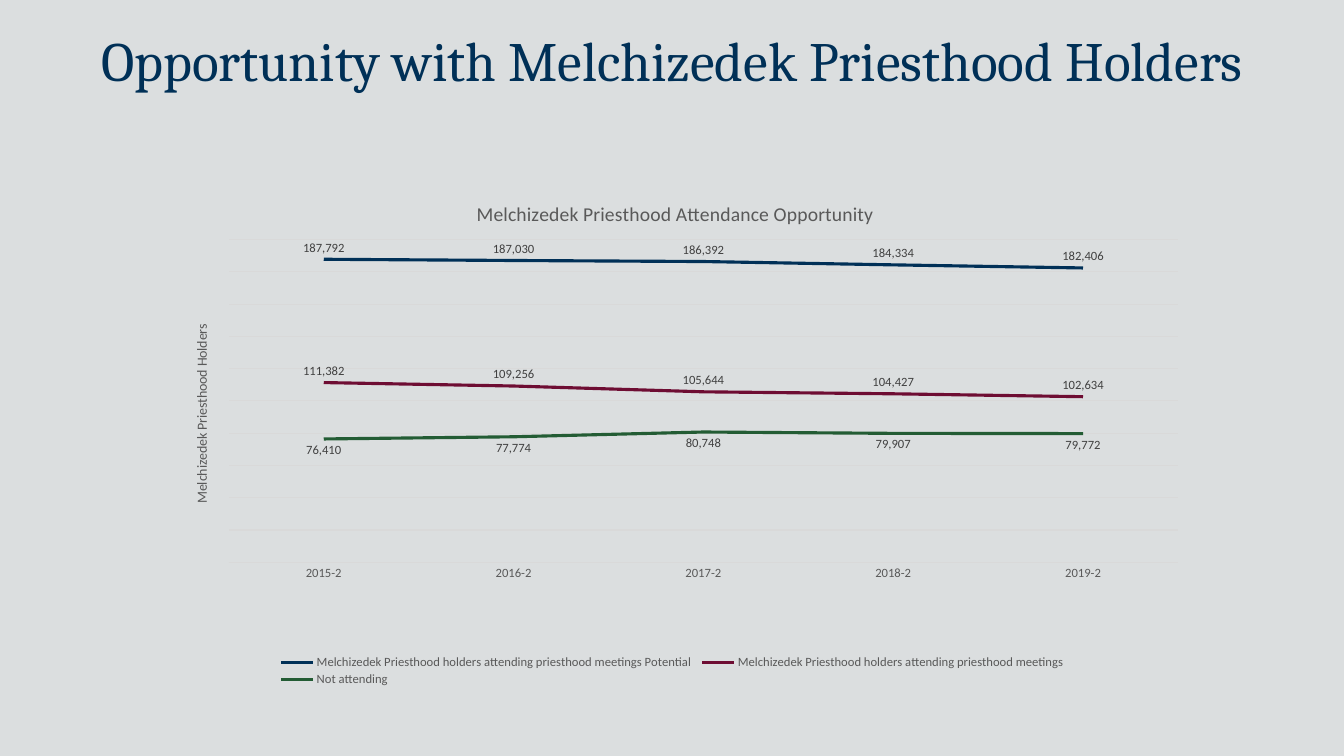
import pptx
import pptx.chart.data
import pptx.dml.color
import pptx.enum.chart
import pptx.enum.text
import pptx.oxml
import pptx.oxml.ns
import pptx.util

Inches = pptx.util.Inches
RGBColor = pptx.dml.color.RGBColor

NAVY = RGBColor(0x00, 0x30, 0x57)
MAROON = RGBColor(0x6E, 0x0D, 0x33)
GREEN = RGBColor(0x23, 0x5C, 0x34)
BACKGROUND = RGBColor(0xDB, 0xDE, 0xDF)
GRID = RGBColor(0xD9, 0xD9, 0xD9)
GRAY = RGBColor(0x59, 0x59, 0x59)
DARK_GRAY = RGBColor(0x40, 0x40, 0x40)

NUMBER_FORMAT = r'_(* #,##0_);_(* \(#,##0\);_(* "-"??_);_('
YEARS = ["2015-2", "2016-2", "2017-2", "2018-2", "2019-2"]
ABOVE = pptx.enum.chart.XL_LABEL_POSITION.ABOVE
BELOW = pptx.enum.chart.XL_LABEL_POSITION.BELOW
SERIES = [
    ("Melchizedek Priesthood holders attending priesthood meetings Potential",
     [187792, 187030, 186392, 184334, 182406], NAVY, ABOVE),
    ("Melchizedek Priesthood holders attending priesthood meetings",
     [111382, 109256, 105644, 104427, 102634], MAROON, ABOVE),
    ("Not attending",
     [76410, 77774, 80748, 79907, 79772], GREEN, BELOW),
]


def format_font(font, size, color, name="Calibri"):
    """Set the size, colour and typeface of a font."""
    font.size = pptx.util.Pt(size)
    font.color.rgb = color
    font.name = name
    font.bold = False


def write_text(tf, text, size=10, color=GRAY, font="Calibri"):
    """Write one centred, formatted paragraph into a text frame."""
    p = tf.paragraphs[0]
    p.alignment = pptx.enum.text.PP_ALIGN.CENTER
    r = p.add_run()
    r.text = text
    format_font(r.font, size, color, font)


def format_line(line, color, width):
    """Set the colour and width of a line."""
    line.color.rgb = color
    line.width = pptx.util.Pt(width)


def set_layout(element, index, inner=False, **fractions):
    """Place a chart part by fractions of the chart area."""
    for old in element.findall(pptx.oxml.ns.qn("c:layout")):
        element.remove(old)
    target = '<c:layoutTarget val="inner"/>' if inner else ""
    modes = "".join(f'<c:{k}Mode val="edge"/>' for k in fractions if k in "xy")
    values = "".join(f'<c:{k} val="{v}"/>' for k, v in fractions.items())
    element.insert(index, pptx.oxml.parse_xml(
        f'<c:layout {pptx.oxml.ns.nsdecls("c")}><c:manualLayout>'
        f"{target}{modes}{values}</c:manualLayout></c:layout>"))


def add_title(s, left, top, width, height):
    """Place and fill the slide title."""
    sp = s.shapes.title
    sp.left, sp.top, sp.width, sp.height = left, top, width, height
    tf = sp.text_frame
    tf.word_wrap = True
    tf.vertical_anchor = pptx.enum.text.MSO_ANCHOR.MIDDLE
    write_text(tf, "Opportunity with Melchizedek Priesthood Holders",
               size=39.6, color=NAVY, font="Cambria")


def format_axes(chart):
    """Format the category axis, the gridlines and the value axis title."""
    axis = chart.category_axis
    axis.major_tick_mark = pptx.enum.chart.XL_TICK_MARK.NONE
    format_font(axis.tick_labels.font, 9, GRAY)
    format_line(axis.format.line, GRID, 0.75)

    axis = chart.value_axis
    axis.minimum_scale, axis.maximum_scale = 0, 200000
    axis.major_unit = 20000
    axis.has_major_gridlines = True
    format_line(axis.major_gridlines.format.line, GRID, 0.75)
    axis.tick_labels.number_format = NUMBER_FORMAT
    axis.tick_labels.number_format_is_linked = False
    axis.visible = False
    tf = axis.axis_title.text_frame
    write_text(tf, "Melchizedek Priesthood Holders")
    tf._txBody.find(pptx.oxml.ns.qn("a:bodyPr")).set("rot", "-5400000")
    set_layout(axis.axis_title.element, 1, x=0.04, y=0.28)


def format_series(series, color, position):
    """Format one line and its value labels."""
    series.smooth = False
    format_line(series.format.line, color, 2.25)
    labels = series.data_labels
    labels.show_value = True
    labels.position = position
    labels.number_format = NUMBER_FORMAT
    labels.number_format_is_linked = False
    format_font(labels.font, 9, DARK_GRAY)


def add_attendance_chart(s, left, top, width, height):
    """Add the attendance line chart."""
    data = pptx.chart.data.CategoryChartData(number_format=NUMBER_FORMAT)
    data.categories = YEARS
    for name, values, _, _ in SERIES:
        data.add_series(name, values)
    chart = s.shapes.add_chart(pptx.enum.chart.XL_CHART_TYPE.LINE,
                               left, top, width, height, data).chart
    format_font(chart.font, 10, GRAY)
    chart.plots[0].vary_by_categories = False
    write_text(chart.chart_title.text_frame,
               "Melchizedek Priesthood Attendance Opportunity", size=14)
    set_layout(chart.chart_title.element, 1, x=0.31, y=0.04)

    format_axes(chart)
    for series, (_, _, color, position) in zip(chart.plots[0].series, SERIES):
        format_series(series, color, position)

    chart.has_legend = True
    chart.legend.position = pptx.enum.chart.XL_LEGEND_POSITION.BOTTOM
    chart.legend.include_in_layout = False
    format_font(chart.legend.font, 9, GRAY)
    set_layout(chart.legend._element, 1, x=0.12, y=0.92, w=0.76, h=0.07)
    plot_area = chart._chartSpace.chart.plotArea
    set_layout(plot_area, 0, inner=True, x=0.077, y=0.122, w=0.906, h=0.623)


def main():
    """Build and save the presentation."""
    prs = pptx.Presentation()
    prs.slide_width, prs.slide_height = Inches(13.33), Inches(7.5)
    s = prs.slides.add_slide(prs.slide_layouts.get_by_name("Title Only"))
    s.background.fill.solid()
    s.background.fill.fore_color.rgb = BACKGROUND
    add_title(s, Inches(0.24), Inches(0.17), Inches(12.85), Inches(0.83))
    add_attendance_chart(s, Inches(1.47), Inches(1.75),
                         Inches(10.39), Inches(5.14))
    prs.save("out.pptx")


if __name__ == "__main__":
    main()
